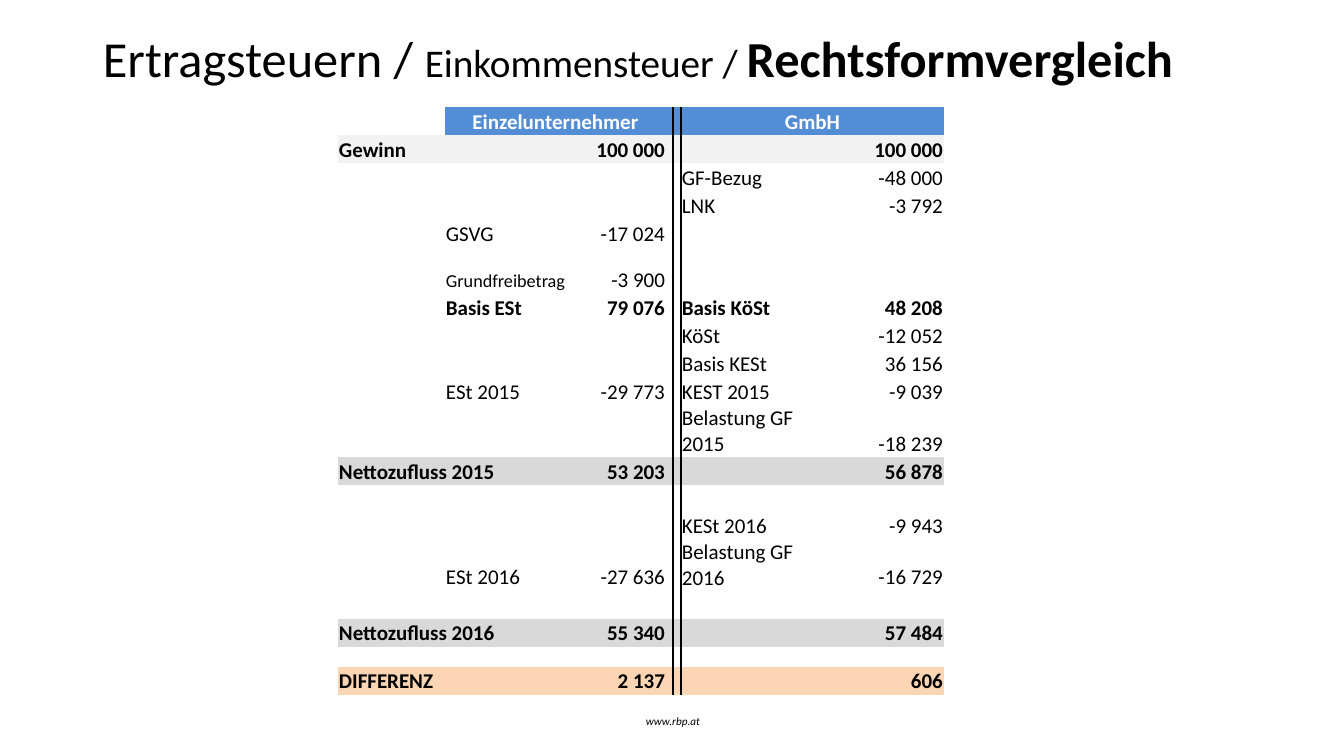
from lxml.etree import SubElement
from pptx import Presentation
from pptx.dml.color import RGBColor
from pptx.enum.text import MSO_ANCHOR, PP_ALIGN
from pptx.oxml import parse_xml
from pptx.oxml.ns import nsdecls, qn
from pptx.util import Emu, Pt

# Content
COLORS = {
    "black": "000000", "white": "FFFFFF", "header": "538DD5",
    "profit": "F2F2F2", "net": "D9D9D9", "difference": "FCD5B4",
}
FONT = "Calibri"
TITLE_RUNS = [  # text, size, bold
    ("Ertragsteuern / ", 36, False),
    ("Einkommensteuer / ", 28, False),
    ("Rechtsformvergleich", 36, True),
]
FOOTER = "www.rbp.at"
ROWS = [  # height, kind, heading, sole trader item and amount, GmbH item and amount
    (28, "header", "", "Einzelunternehmer", "", "GmbH", ""),
    (28, "profit", "Gewinn", "", "100 000", "", "100 000"),
    (28, "plain", "", "", "", "GF-Bezug", "-48 000"),
    (28, "plain", "", "", "", "LNK", "-3 792"),
    (28, "plain", "", "GSVG", "-17 024", "", ""),
    (46, "plain", "", "Grundfreibetrag", "-3 900", "", ""),
    (28, "basis", "", "Basis ESt", "79 076", "Basis KöSt", "48 208"),
    (28, "plain", "", "", "", "KöSt", "-12 052"),
    (28, "plain", "", "", "", "Basis KESt", "36 156"),
    (28, "plain", "", "ESt 2015", "-29 773", "KEST 2015", "-9 039"),
    (52, "plain", "", "", "", "Belastung GF 2015", "-18 239"),
    (28, "net", "Nettozufluss 2015", "", "53 203", "", "56 878"),
    (26, "plain", "", "", "", "", ""),
    (28, "plain", "", "", "", "KESt 2016", "-9 943"),
    (52, "plain", "", "ESt 2016", "-27 636", "Belastung GF 2016", "-16 729"),
    (28, "plain", "", "", "", "", ""),
    (28, "net", "Nettozufluss 2016", "", "55 340", "", "57 484"),
    (20, "plain", "", "", "", "", ""),
    (28, "difference", "DIFFERENZ", "", "2 137", "", "606"),
]

# Layout in px
SLIDE_WIDTH, SLIDE_HEIGHT = 1344, 756
TITLE_BOX = (93, 19, 1121, 85)
FOOTER_BOX = (446, 701, 454, 40)
TABLE_LEFT, TABLE_TOP = 338, 107
COLUMN_WIDTHS = [107, 123, 98, 7, 8, 154, 109]
TEXT_COLUMNS = [0, 1, 2, 5, 6]
AMOUNT_COLUMNS = (2, 6)
DIVIDER_BORDERS = {3: "a:lnR", 4: "a:lnL"}
MERGES = {"header": [(1, 2), (5, 6)], "net": [(0, 1)], "difference": [(0, 1)]}
TEXT_SIZE, SMALL_SIZE, EMPTY_SIZE = 15, 13, 8
NO_GRID_STYLE = "{2D5ABB26-0587-4C30-8999-92F81FD0307C}"


def px(length):
    return Emu(round(length * 914400 / 100.8))


def add_run(paragraph, text, size, color="black", bold=False, italic=False):
    run = paragraph.add_run()
    run.text = text
    run.font.name = FONT
    run.font.size = Pt(size)
    run.font.bold = bold
    run.font.italic = italic
    run.font.color.rgb = RGBColor.from_string(COLORS[color])


def add_text_box(slide, box):
    frame = slide.shapes.add_textbox(*map(px, box)).text_frame
    frame.word_wrap = True
    frame.vertical_anchor = MSO_ANCHOR.MIDDLE
    return frame.paragraphs[0]


def add_divider(cell, tag):
    border = parse_xml(
        f'<{tag} {nsdecls("a")} w="{Pt(1.5)}"><a:solidFill>'
        f'<a:srgbClr val="{COLORS["black"]}"/></a:solidFill></{tag}>')
    cell._tc.get_or_add_tcPr().insert(0, border)


def fill_cell(cell, kind, column):
    if kind in ("header", "profit", "net", "difference"):
        color = "white" if kind == "header" and column == 0 else kind
    elif column in DIVIDER_BORDERS:
        color = "white"
    else:
        cell.fill.background()
        return
    cell.fill.solid()
    cell.fill.fore_color.rgb = RGBColor.from_string(COLORS[color])


def write_cell(cell, text, kind, column):
    cell.margin_left = cell.margin_right = cell.margin_top = px(1)
    cell.margin_bottom = 0
    cell.vertical_anchor = MSO_ANCHOR.BOTTOM
    paragraph = cell.text_frame.paragraphs[0]
    if not text:
        # A small end mark keeps empty rows at their height
        SubElement(paragraph._p, qn("a:endParaRPr"), sz=str(EMPTY_SIZE * 100))
        return
    if kind == "header":
        paragraph.alignment = PP_ALIGN.CENTER
    elif column in AMOUNT_COLUMNS:
        paragraph.alignment = PP_ALIGN.RIGHT
    else:
        paragraph.alignment = PP_ALIGN.LEFT
    size = SMALL_SIZE if text == "Grundfreibetrag" else TEXT_SIZE
    color = "white" if kind == "header" else "black"
    add_run(paragraph, text, size, color, bold=kind != "plain")


def add_comparison_table(slide):
    heights = [row[0] for row in ROWS]
    frame = slide.shapes.add_table(
        len(ROWS), len(COLUMN_WIDTHS), px(TABLE_LEFT), px(TABLE_TOP),
        px(sum(COLUMN_WIDTHS)), px(sum(heights)))
    table = frame.table
    table.first_row = table.horz_banding = False
    table._tbl.tblPr.find(qn("a:tableStyleId")).text = NO_GRID_STYLE
    for column, width in zip(table.columns, COLUMN_WIDTHS):
        column.width = px(width)
    for row_index, (height, kind, *texts) in enumerate(ROWS):
        table.rows[row_index].height = px(height)
        text_by_column = dict(zip(TEXT_COLUMNS, texts))
        for column in range(len(COLUMN_WIDTHS)):
            cell = table.cell(row_index, column)
            write_cell(cell, text_by_column.get(column, ""), kind, column)
            fill_cell(cell, kind, column)
            if column in DIVIDER_BORDERS:
                add_divider(cell, DIVIDER_BORDERS[column])
        for first, last in MERGES.get(kind, []):
            table.cell(row_index, first).merge(table.cell(row_index, last))


def main():
    presentation = Presentation()
    presentation.slide_width = px(SLIDE_WIDTH)
    presentation.slide_height = px(SLIDE_HEIGHT)
    slide = presentation.slides.add_slide(presentation.slide_layouts[6])

    # Title
    title = add_text_box(slide, TITLE_BOX)
    title.line_spacing = 0.9
    for text, size, bold in TITLE_RUNS:
        add_run(title, text, size, bold=bold)

    # Footer
    footer = add_text_box(slide, FOOTER_BOX)
    footer.alignment = PP_ALIGN.CENTER
    add_run(footer, FOOTER, 8, italic=True)

    # Comparison of legal forms
    add_comparison_table(slide)
    presentation.save("out.pptx")


if __name__ == "__main__":
    main()
